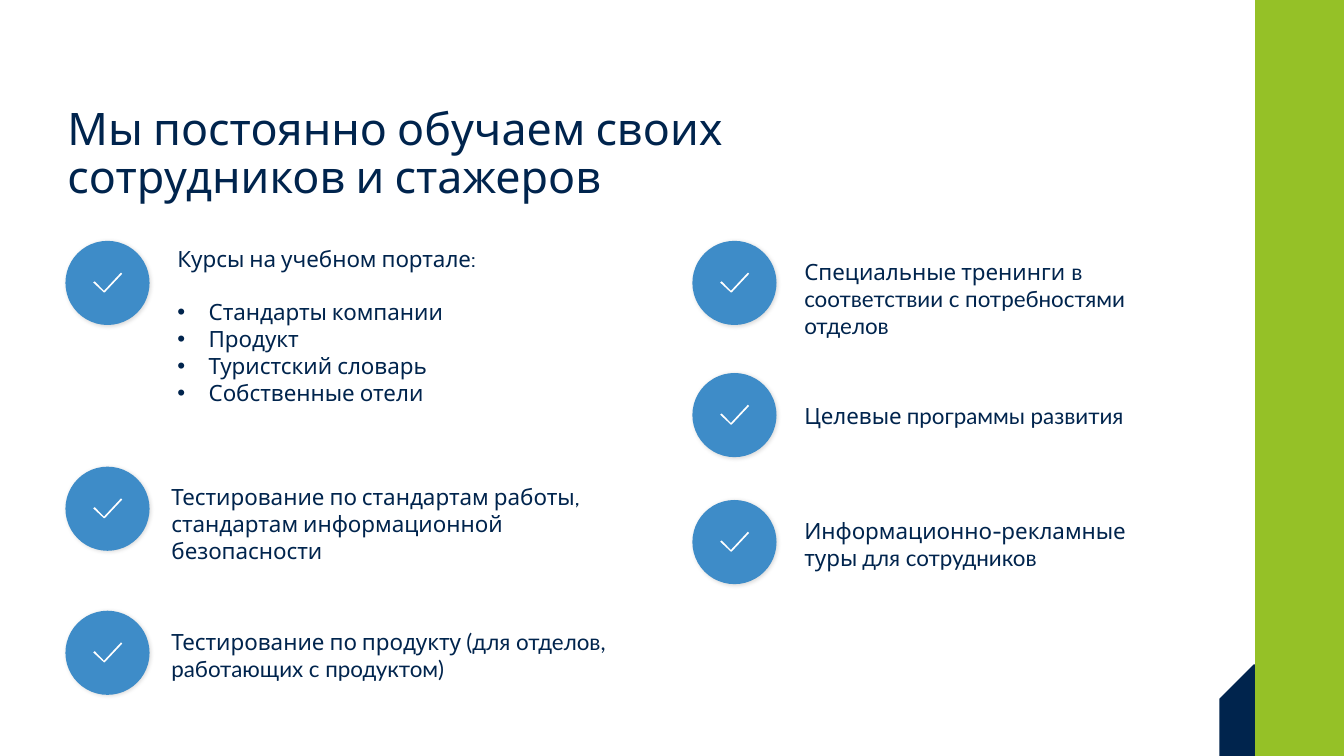
from dataclasses import dataclass

from lxml.etree import SubElement
from pptx import Presentation
from pptx.dml.color import RGBColor
from pptx.enum.shapes import MSO_SHAPE
from pptx.enum.text import MSO_ANCHOR, MSO_AUTO_SIZE
from pptx.oxml.ns import qn
from pptx.shapes.autoshape import Shape
from pptx.slide import Slide
from pptx.text.text import _Paragraph as Paragraph
from pptx.util import Cm, Pt

NAVY = RGBColor(0x00, 0x24, 0x4D)
GREEN = RGBColor(0x95, 0xC1, 0x27)
BLUE = RGBColor(0x3E, 0x8C, 0xC8)
WHITE = RGBColor(0xFF, 0xFF, 0xFF)

HEADING_FONT = "Cabin"
DETAIL_FONT = "Lato"
SLIDE_WIDTH, SLIDE_HEIGHT = 33.87, 19.05
CIRCLE_SIZE = 2.12
LEFT_COLUMN, RIGHT_COLUMN = 1.65, 17.45
BULLET_INDENT = 0.79
CHECK_POINTS = [
    (1.43, 0.83), (1.40, 0.80), (0.97, 1.26), (0.74, 1.02),
    (0.70, 1.05), (0.97, 1.30), (0.99, 1.30),
]


@dataclass(frozen=True)
class Area:
    left: float
    top: float
    width: float
    height: float

    def lengths(self) -> tuple[Cm, Cm, Cm, Cm]:
        return Cm(self.left), Cm(self.top), Cm(self.width), Cm(self.height)


@dataclass(frozen=True)
class Topic:
    circle_left: float
    circle_top: float
    text_area: Area
    heading: str
    detail: str = ""
    bullets: tuple[str, ...] = ()


TOPICS = [
    Topic(LEFT_COLUMN, 6.07, Area(4.47, 6.07, 12.6, 4.32),
          "Курсы на учебном портале:",
          bullets=("Стандарты компании", "Продукт", "Туристский словарь", "Собственные отели")),
    Topic(LEFT_COLUMN, 11.76, Area(4.32, 12.07, 11.3, 2.08),
          "Тестирование по стандартам работы, стандартам информационной безопасности"),
    Topic(LEFT_COLUMN, 15.39, Area(4.32, 15.72, 11.68, 1.57),
          "Тестирование по продукту ", "(для отделов, работающих с продуктом)"),
    Topic(RIGHT_COLUMN, 6.07, Area(20.27, 6.4, 9.4, 2.26),
          "Специальные тренинги", " в соответствии с потребностями отделов"),
    Topic(RIGHT_COLUMN, 9.4, Area(20.27, 10.03, 9.93, 0.81),
          "Целевые ", "программы развития"),
    Topic(RIGHT_COLUMN, 12.6, Area(20.27, 12.93, 8.79, 1.57),
          "Информационно-рекламные туры ", "для сотрудников"),
]


def paint(shape: Shape, color: RGBColor) -> None:
    shape.shadow.inherit = False
    shape.fill.solid()
    shape.fill.fore_color.rgb = color
    shape.line.fill.background()


def add_block(page: Slide, kind: MSO_SHAPE, area: Area, color: RGBColor) -> Shape:
    shape = page.shapes.add_shape(kind, *area.lengths())
    paint(shape, color)
    return shape


def add_soft_shadow(shape: Shape) -> None:
    effects = shape._element.spPr.find(qn("a:effectLst"))
    shadow = SubElement(effects, qn("a:outerShdw"), blurRad=str(Pt(3)), dist=str(Pt(1)),
                        dir="2700000", algn="tl", rotWithShape="0")
    color = SubElement(shadow, qn("a:srgbClr"), val="000000")
    SubElement(color, qn("a:alpha"), val="15000")


def add_text_box(page: Slide, area: Area, frame_format: dict) -> Shape:
    box = page.shapes.add_textbox(*area.lengths())
    for name, value in frame_format.items():
        setattr(box.text_frame, name, value)
    return box


def add_span(para: Paragraph, text: str, font_name: str, size: int) -> None:
    span = para.add_run()
    span.text = text
    for name, value in {"name": font_name, "size": Pt(size)}.items():
        setattr(span.font, name, value)
    span.font.color.rgb = NAVY


def add_bullet(para: Paragraph) -> None:
    properties = para._p.get_or_add_pPr()
    properties.set("marL", str(Cm(BULLET_INDENT)))
    properties.set("indent", str(-Cm(BULLET_INDENT)))
    SubElement(properties, qn("a:buFont"), typeface="Arial")
    SubElement(properties, qn("a:buChar"), char="•")


def add_check(page: Slide, left: float, top: float) -> None:
    circle = add_block(page, MSO_SHAPE.OVAL, Area(left, top, CIRCLE_SIZE, CIRCLE_SIZE), BLUE)
    add_soft_shadow(circle)
    points = [(Cm(left + x), Cm(top + y)) for x, y in CHECK_POINTS]
    builder = page.shapes.build_freeform(*points[0])
    builder.add_line_segments(points[1:], close=True)
    paint(builder.convert_to_shape(), WHITE)


def add_topic(page: Slide, topic: Topic) -> None:
    add_check(page, topic.circle_left, topic.circle_top)
    box = add_text_box(page, topic.text_area, {
        "word_wrap": True,
        "auto_size": MSO_AUTO_SIZE.SHAPE_TO_FIT_TEXT,
        "vertical_anchor": MSO_ANCHOR.TOP,
        "margin_left": 0,
        "margin_right": Cm(0.61),
        "margin_top": Cm(0.1),
        "margin_bottom": Cm(0.1),
    })
    para = box.text_frame.paragraphs[0]
    add_span(para, topic.heading, HEADING_FONT, 16)
    if topic.detail:
        add_span(para, topic.detail, DETAIL_FONT, 16)
    for position, bullet in enumerate(topic.bullets):
        para = box.text_frame.add_paragraph()
        add_bullet(para)
        if position == 0:
            para.space_before = Pt(19.2)
        add_span(para, bullet, HEADING_FONT, 16)


def add_title(page: Slide) -> None:
    box = add_text_box(page, Area(1.45, 2.92, 24.16, 1.98), {
        "word_wrap": True,
        "vertical_anchor": MSO_ANCHOR.MIDDLE,
    })
    para = box.text_frame.paragraphs[0]
    para.line_spacing = 0.9
    add_span(para, "Мы постоянно обучаем своих сотрудников и стажеров", HEADING_FONT, 32)


def add_side_band(page: Slide) -> None:
    corner = add_block(page, MSO_SHAPE.SNIP_1_RECTANGLE, Area(30.73, 16.74, 2.64, 2.31), NAVY)
    corner.adjustments[0] = 0.377
    corner._element.spPr.find(qn("a:xfrm")).set("flipH", "1")
    add_block(page, MSO_SHAPE.RECTANGLE, Area(31.63, 0, 2.24, SLIDE_HEIGHT), GREEN)


def main() -> None:
    deck = Presentation()
    deck.slide_width = Cm(SLIDE_WIDTH)
    deck.slide_height = Cm(SLIDE_HEIGHT)
    page = deck.slides.add_slide(deck.slide_layouts[6])
    add_side_band(page)
    add_title(page)
    for topic in TOPICS:
        add_topic(page, topic)
    deck.save("out.pptx")


if __name__ == "__main__":
    main()
